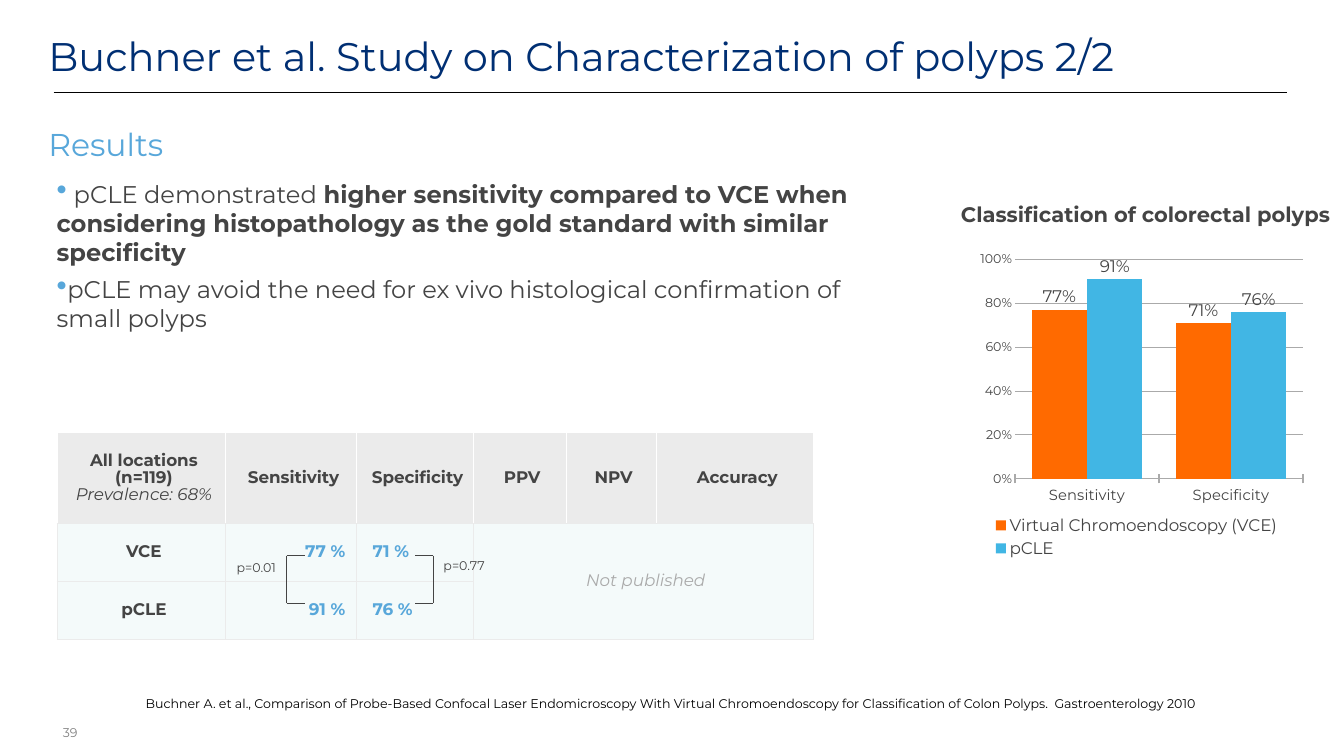
from dataclasses import dataclass

from lxml import etree
from pptx import Presentation
from pptx.chart.data import CategoryChartData
from pptx.dml.color import RGBColor
from pptx.enum.chart import (XL_CHART_TYPE, XL_LABEL_POSITION, XL_LEGEND_POSITION,
                             XL_TICK_LABEL_POSITION, XL_TICK_MARK)
from pptx.enum.shapes import MSO_CONNECTOR
from pptx.enum.text import MSO_ANCHOR, MSO_AUTO_SIZE, PP_ALIGN
from pptx.oxml import parse_xml
from pptx.oxml.ns import nsdecls, qn
from pptx.util import Inches, Pt

LEFT, CENTER, RIGHT = PP_ALIGN.LEFT, PP_ALIGN.CENTER, PP_ALIGN.RIGHT
TOP, MIDDLE = MSO_ANCHOR.TOP, MSO_ANCHOR.MIDDLE
COLUMN = XL_CHART_TYPE.COLUMN_CLUSTERED
BOTTOM, OUTSIDE = XL_LEGEND_POSITION.BOTTOM, XL_LABEL_POSITION.OUTSIDE_END
LOW, CROSS, INSIDE, NONE = (XL_TICK_LABEL_POSITION.LOW, XL_TICK_MARK.CROSS,
                            XL_TICK_MARK.INSIDE, XL_TICK_MARK.NONE)
STRAIGHT = MSO_CONNECTOR.STRAIGHT
BOLD, ITALIC = {"bold": True}, {"bold": False, "italic": True}


@dataclass(frozen=True)
class Theme:
    font: str = "Montserrat"
    navy: str = "002F73"
    blue: str = "58A7DA"
    ink: str = "444444"
    muted: str = "818181"
    grey: str = "AAAAAA"
    black: str = "000000"
    white: str = "FFFFFF"
    head: str = "EBEBEB"
    cell: str = "F4FAFA"
    bars: tuple = ("FF6A00", "41B6E4")
    title: int = 38
    section: int = 30
    body: int = 23
    caption: int = 20
    table: int = 16
    axis: int = 14
    small: int = 12


def apply(obj, values):
    for name, value in values.items():
        setattr(obj, name, value)


class Deck:
    def __init__(self, theme, width, height):
        self.t = theme
        self.prs = Presentation()
        apply(self.prs, {"slide_width": Inches(width), "slide_height": Inches(height)})
        self.s = self.prs.slides.add_slide(self.prs.slide_layouts[5])

    def x(self, share):
        return round(self.prs.slide_width * share / 100)

    def y(self, share):
        return round(self.prs.slide_height * share / 100)

    def box(self, left, top, width, height):
        return self.x(left), self.y(top), self.x(width), self.y(height)

    def style(self, font, size, color, **fmt):
        apply(font, {"name": self.t.font, "size": Pt(size), **fmt})
        font.color.rgb = RGBColor.from_string(color)

    def stroke(self, line, color, width=1):
        line.color.rgb = RGBColor.from_string(color)
        line.width = Pt(width)

    def fill_text(self, tf, paras, size, color, align=LEFT, bullet=None, **para):
        for i, runs in enumerate(paras):
            p = tf.paragraphs[0] if i == 0 else tf.add_paragraph()
            if bullet:
                self.bullet(p, bullet)
            apply(p, {"alignment": align, "space_before": Pt(8 if bullet and i else 0), **para})
            for text, fmt in runs:
                r = p.add_run()
                r.text = text
                self.style(r.font, size, color, **fmt)

    def bullet(self, p, color):
        pPr = p._p.get_or_add_pPr()
        apply_xml = {"marL": str(Inches(0.03)), "indent": "0"}
        for name, value in apply_xml.items():
            pPr.set(name, value)
        for tag, attr, value in (("buSzPct", "val", "125000"), ("buChar", "char", "•")):
            etree.SubElement(pPr, qn(f"a:{tag}")).set(attr, value)
        pPr.insert(0, parse_xml(f'<a:buClr {nsdecls("a")}><a:srgbClr val="{color}"/></a:buClr>'))

    def frame(self, tf, inset=0.04, anchor=TOP, wrap=True):
        margins = {f"margin_{side}": Inches(inset) for side in ("left", "right", "top", "bottom")}
        apply(tf, {**margins, "vertical_anchor": anchor, "word_wrap": wrap,
                   "auto_size": MSO_AUTO_SIZE.NONE})

    def title(self, text, *place):
        sp = self.s.shapes.title
        apply(sp, dict(zip(("left", "top", "width", "height"), self.box(*place))))
        self.frame(sp.text_frame, 0, MIDDLE)
        self.fill_text(sp.text_frame, [[(text, {})]], self.t.title, self.t.navy)

    def text(self, paras, place, size, color, align=LEFT, anchor=TOP, wrap=True, bullet=None):
        tf = self.s.shapes.add_textbox(*self.box(*place)).text_frame
        self.frame(tf, anchor=anchor, wrap=wrap)
        self.fill_text(tf, paras, size, color, align, bullet)

    def line(self, x1, y1, x2, y2, color, width=1, shapes=None):
        sp = (shapes or self.s.shapes).add_connector(
            STRAIGHT, self.x(x1), self.y(y1), self.x(x2), self.y(y2))
        self.stroke(sp.line, color, width)
        etree.SubElement(sp._element.spPr, qn("a:effectLst"))

    def bracket(self, stem, tip, top, bottom):
        shapes = self.s.shapes.add_group_shape().shapes
        for ends in ((stem, top, stem, bottom), (stem, top, tip, top), (stem, bottom, tip, bottom)):
            self.line(*ends, self.t.ink, shapes=shapes)

    def cell(self, cell, fill, edge):
        tcPr = cell._tc.get_or_add_tcPr()
        for side in "LRTB":
            color = self.t.head if side == "B" else edge
            tcPr.append(parse_xml(
                f'<a:ln{side} {nsdecls("a")} w="{Pt(1)}"><a:solidFill>'
                f'<a:srgbClr val="{color}"/></a:solidFill></a:ln{side}>'))
        cell.fill.solid()
        cell.fill.fore_color.rgb = RGBColor.from_string(fill)

    def table(self, left, top, cols, rows, cells, merge):
        t = self.t
        table = self.s.shapes.add_table(
            len(rows), len(cols), *self.box(left, top, sum(cols), sum(rows))).table
        apply(table, {"first_row": False, "horz_banding": False})
        for col, share in zip(table.columns, cols):
            col.width = self.x(share)
        for row, share in zip(table.rows, rows):
            row.height = self.y(share)
        for i in range(len(rows)):
            for j in range(len(cols)):
                self.cell(table.cell(i, j), *((t.cell, t.head) if i else (t.head, t.white)))
        (r1, c1), (r2, c2) = merge
        table.cell(r1, c1).merge(table.cell(r2, c2))
        for (i, j), (paras, color, align) in cells.items():
            cell = table.cell(i, j)
            inset = 0.15 if i and j else 0.04
            apply(cell, {"margin_left": Inches(inset + 0.06), "margin_right": Inches(inset),
                         "margin_top": Inches(inset), "margin_bottom": Inches(inset),
                         "vertical_anchor": MIDDLE})
            self.fill_text(cell.text_frame, paras, t.table, color, align, line_spacing=0.83)

    def chart(self, place, categories, series, plot):
        t = self.t
        data = CategoryChartData()
        data.categories = categories
        for name, values in series.items():
            data.add_series(name, values)
        chart = self.s.shapes.add_chart(COLUMN, *self.box(*place), data).chart
        apply(chart, {"has_title": False, "has_legend": True})
        self.style(chart.font, 10, t.black)
        apply(chart.legend, {"position": BOTTOM, "include_in_layout": True})
        self.style(chart.legend.font, t.table, t.ink)
        bars = chart.plots[0]
        apply(bars, {"gap_width": 60, "overlap": 0, "vary_by_categories": False})
        for ser, color in zip(bars.series, t.bars):
            ser.format.fill.solid()
            ser.format.fill.fore_color.rgb = RGBColor.from_string(color)
            labels = ser.data_labels
            apply(labels, {"show_value": True, "position": OUTSIDE, "number_format": "0%",
                           "number_format_is_linked": False})
            self.style(labels.font, t.table, t.ink)
        cat, val = chart.category_axis, chart.value_axis
        apply(cat, {"major_tick_mark": CROSS, "minor_tick_mark": NONE, "tick_label_position": LOW})
        apply(val, {"minimum_scale": 0, "maximum_scale": 1, "major_unit": 0.2,
                    "major_tick_mark": INSIDE, "minor_tick_mark": NONE})
        apply(val.tick_labels, {"number_format": "0%", "number_format_is_linked": False})
        self.style(cat.tick_labels.font, t.axis, t.ink)
        self.style(val.tick_labels.font, t.small, t.ink)
        self.stroke(cat.format.line, t.grey)
        self.stroke(val.major_gridlines.format.line, t.grey)
        val.format.line.fill.background()
        area = chart._chartSpace.chart.plotArea
        for old in area.findall(qn("c:layout")):
            area.remove(old)
        parts = [("layoutTarget", "inner"), ("xMode", "edge"), ("yMode", "edge"), *zip("xywh", plot)]
        items = "".join(f'<c:{tag} val="{value}"/>' for tag, value in parts)
        area.insert(0, parse_xml(f'<c:layout {nsdecls("c")}><c:manualLayout>{items}'
                                 '</c:manualLayout></c:layout>'))


def main():
    t = Theme()
    d = Deck(t, 17.78, 10)
    d.line(3.99, 12.2, 95.78, 12.2, t.black, 0.25)
    d.title("Buchner et al. Study on Characterization of polyps 2/2", 3.6, 2.4, 91.56, 9.9)
    d.text([[("Results", {})]], (3.37, 16.2, 9.06, 5), t.section, t.blue, wrap=False)
    d.text([[("39", {})]], (4.27, 95.7, 1.74, 2.5), t.small, t.muted, RIGHT, MIDDLE, False)
    d.text([[(" pCLE demonstrated ", {}),
             ("higher sensitivity compared to VCE when considering histopathology "
              "as the gold standard with similar specificity", BOLD)],
            [("pCLE may avoid the need for ex vivo histological confirmation of small polyps", {})]],
           (3.82, 23.3, 62.94, 20.8), t.body, t.ink, bullet=t.blue)
    d.text([[("Buchner A. et al., Comparison of Probe-Based Confocal Laser Endomicroscopy With Virtual "
              "Chromoendoscopy for Classification of Colon Polyps.  Gastroenterology 2010", {})]],
           (1.86, 91.6, 96.18, 2.5), t.small, t.black, CENTER)
    d.chart((71.65, 32.2, 25.82, 42.1), ("Sensitivity", "Specificity"),
            {"Virtual Chromoendoscopy (VCE)": (0.77, 0.71), "pCLE": (0.91, 0.76)},
            (0.15, 0.05, 0.83, 0.69))
    d.text([[("Classification of colorectal polyps", BOLD)]], (69.97, 26.2, 30.54, 4),
           t.caption, t.ink, CENTER)

    heads = ("Sensitivity", "Specificity", "PPV", "NPV", "Accuracy")
    cells = {(0, j): ([[(head, BOLD)]], t.ink, CENTER) for j, head in enumerate(heads, 1)}
    cells[0, 0] = ([[("All locations (n=119)", BOLD)], [("Prevalence: 68%", ITALIC)]], t.ink, CENTER)
    for i, row in enumerate((("VCE", "77 %", "71 %"), ("pCLE", "91 %", "76 %")), 1):
        for j, (text, color, align) in enumerate(zip(row, (t.ink, t.blue, t.blue),
                                                     (CENTER, RIGHT, LEFT))):
            cells[i, j] = ([[(text, BOLD)]], color, align)
    cells[1, 3] = ([[("Not published", ITALIC)]], t.grey, CENTER)
    d.table(4.27, 57.2, (12.54, 9.73, 8.72, 6.86, 6.75, 11.64), (12.1, 7.65, 7.65),
            cells, ((1, 3), (2, 5)))

    for text, left, top, stem, tip in (("p=0.77", 31.95, 73.4, 32.23, 30.9),
                                       ("p=0.01", 16.48, 73.6, 21.32, 22.7)):
        d.text([[(text, {})]], (left, top, 5.17, 2.9), t.small, t.ink, CENTER)
        d.bracket(stem, tip, 73.5, 79.8)
    d.prs.save("out.pptx")


if __name__ == "__main__":
    main()
